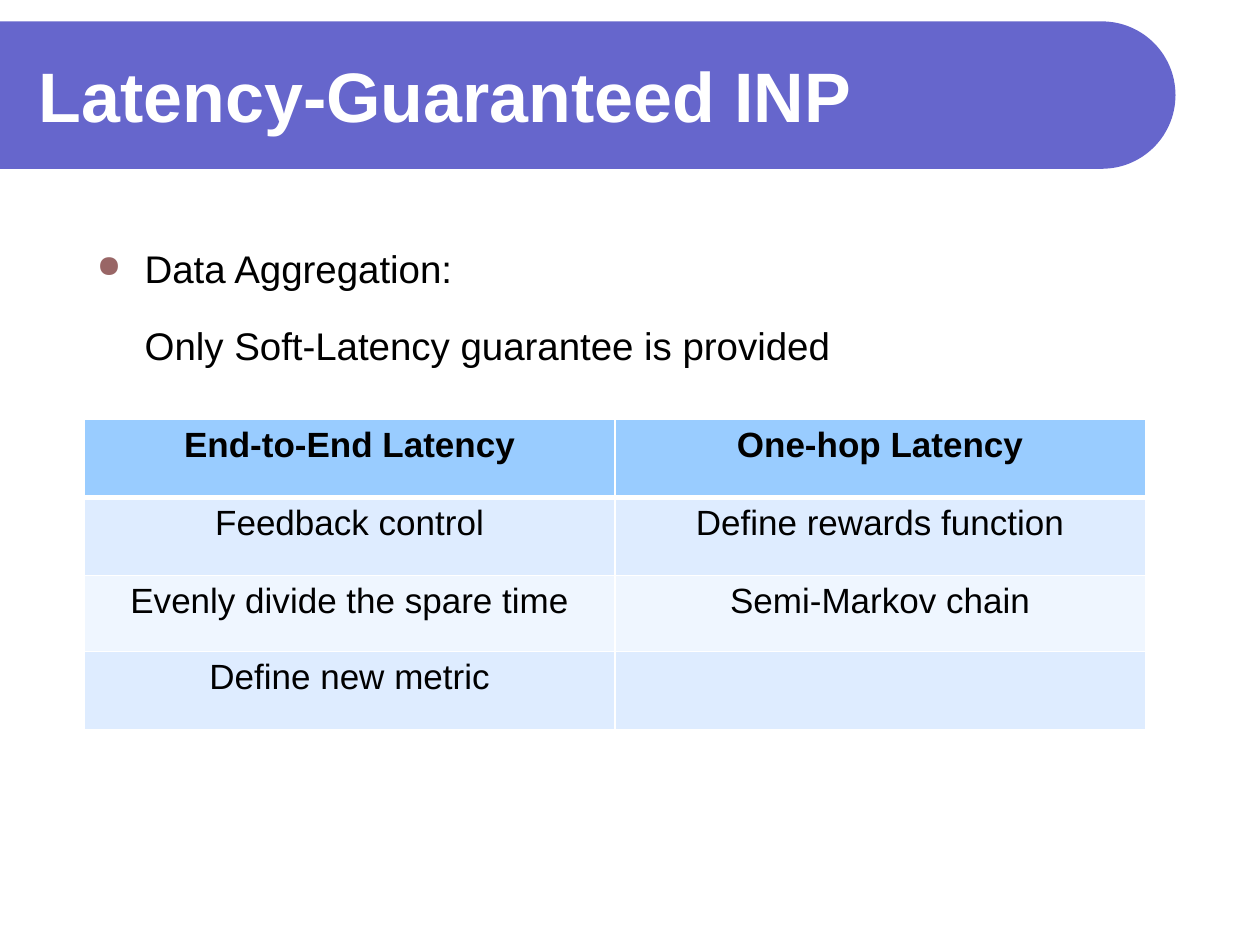
"""Build the latency-guaranteed INP slide with its banner, bullet and table."""
import math
from dataclasses import dataclass

import pptx
import pptx.dml.color
import pptx.enum.text
import pptx.oxml
import pptx.oxml.ns
import pptx.util
from pptx.util import Inches


@dataclass(frozen=True)
class Theme:
    font: str = "Arial"
    banner: str = "6666CC"
    white: str = "FFFFFF"
    ink: str = "000000"
    bullet: str = "996666"
    header: str = "99CCFF"
    bands: tuple = ("DEECFF", "EFF6FF")
    title_size: int = 40
    body_size: int = 22
    table_size: int = 20


THEME = Theme()
LATENCY_ROWS = [
    ("End-to-End Latency", "One-hop Latency"),
    ("Feedback control", "Define rewards function"),
    ("Evenly divide the spare time", "Semi-Markov chain"),
    ("Define new metric", ""),
]


def rgb(color):
    return pptx.dml.color.RGBColor.from_string(color)


def style(paragraph, size, color, bold=False):
    font = paragraph.font
    font.name, font.size, font.bold = THEME.font, pptx.util.Pt(size), bold
    font.color.rgb = rgb(color)


def add_xml(parent, markup):
    namespace = pptx.oxml.ns.nsdecls("a")
    tag, rest = markup.split(" ", 1)
    parent.append(pptx.oxml.parse_xml(f"{tag} {namespace} {rest}"))


def add_banner(slide, top, width, height):
    radius = height / 2
    angles = [math.radians(degree) for degree in range(-90, 91, 3)]
    cap = [
        (Inches(width - radius + radius * math.cos(angle)),
         Inches(top + radius + radius * math.sin(angle)))
        for angle in angles
    ]
    builder = slide.shapes.build_freeform(0, Inches(top))
    builder.add_line_segments(cap + [(0, Inches(top + height))], close=True)
    banner = builder.convert_to_shape()
    banner.shadow.inherit = False
    banner.fill.solid()
    banner.fill.fore_color.rgb = rgb(THEME.banner)
    banner.line.fill.background()


def add_text_frame(slide, left, top, width, height):
    box = slide.shapes.add_textbox(
        Inches(left), Inches(top), Inches(width), Inches(height))
    box.text_frame.word_wrap = True
    return box.text_frame


def add_title(slide, wording):
    frame = add_text_frame(slide, 0.21, 0.25, 8.77, 1)
    frame.vertical_anchor = pptx.enum.text.MSO_ANCHOR.MIDDLE
    title = frame.paragraphs[0]
    title.text = wording
    style(title, THEME.title_size, THEME.white, bold=True)


def add_point(slide, heading, detail):
    frame = add_text_frame(slide, 0.67, 1.86, 8.67, 1.3)
    hanging = Inches(0.38)
    point, explanation = frame.paragraphs[0], frame.add_paragraph()
    for paragraph, wording, indent in (
            (point, heading, -hanging), (explanation, detail, 0)):
        paragraph.text = wording
        paragraph.line_spacing = 1.1
        paragraph.space_before = pptx.util.Pt(15)
        properties = paragraph._p.get_or_add_pPr()
        properties.set("marL", str(hanging))
        properties.set("indent", str(indent))
        if paragraph is point:
            add_xml(properties, f'<a:buClr ><a:srgbClr val="{THEME.bullet}"/></a:buClr>')
            add_xml(properties, '<a:buSzPct val="80000"/>')
            add_xml(properties, '<a:buChar char="●"/>')
        style(paragraph, THEME.body_size, THEME.ink)


def set_borders(cell, top, bottom):
    properties = cell._tc.get_or_add_tcPr()
    for side, points in (("L", 1), ("R", 1), ("T", top), ("B", bottom)):
        add_xml(properties,
                f'<a:ln{side} w="{pptx.util.Pt(points)}"><a:solidFill>'
                f'<a:srgbClr val="{THEME.white}"/></a:solidFill></a:ln{side}>')


def add_latency_table(slide, rows):
    heights = (0.62, 0.62, 0.6, 0.62)
    table = slide.shapes.add_table(
        len(rows), len(rows[0]), Inches(0.67), Inches(3.33),
        Inches(8.42), Inches(sum(heights))).table
    for row_index, (wordings, height) in enumerate(zip(rows, heights)):
        table.rows[row_index].height = Inches(height)
        is_header = row_index == 0
        fill = THEME.header if is_header else THEME.bands[(row_index - 1) % 2]
        for column_index, wording in enumerate(wordings):
            cell = table.cell(row_index, column_index)
            set_borders(cell, top=3 if row_index == 1 else 1,
                        bottom=3 if is_header else 1)
            cell.fill.solid()
            cell.fill.fore_color.rgb = rgb(fill)
            entry = cell.text_frame.paragraphs[0]
            entry.text = wording
            entry.alignment = pptx.enum.text.PP_ALIGN.CENTER
            style(entry, THEME.table_size, THEME.ink, bold=is_header)


def main():
    presentation = pptx.Presentation()
    presentation.slide_width = Inches(10)
    presentation.slide_height = Inches(7.5)
    slide = presentation.slides.add_slide(presentation.slide_layouts[6])
    add_banner(slide, top=0.17, width=9.33, height=1.17)
    add_title(slide, "Latency-Guaranteed INP")
    add_point(slide, "Data Aggregation:", "Only Soft-Latency guarantee is provided")
    add_latency_table(slide, LATENCY_ROWS)
    presentation.save("out.pptx")


if __name__ == "__main__":
    main()
